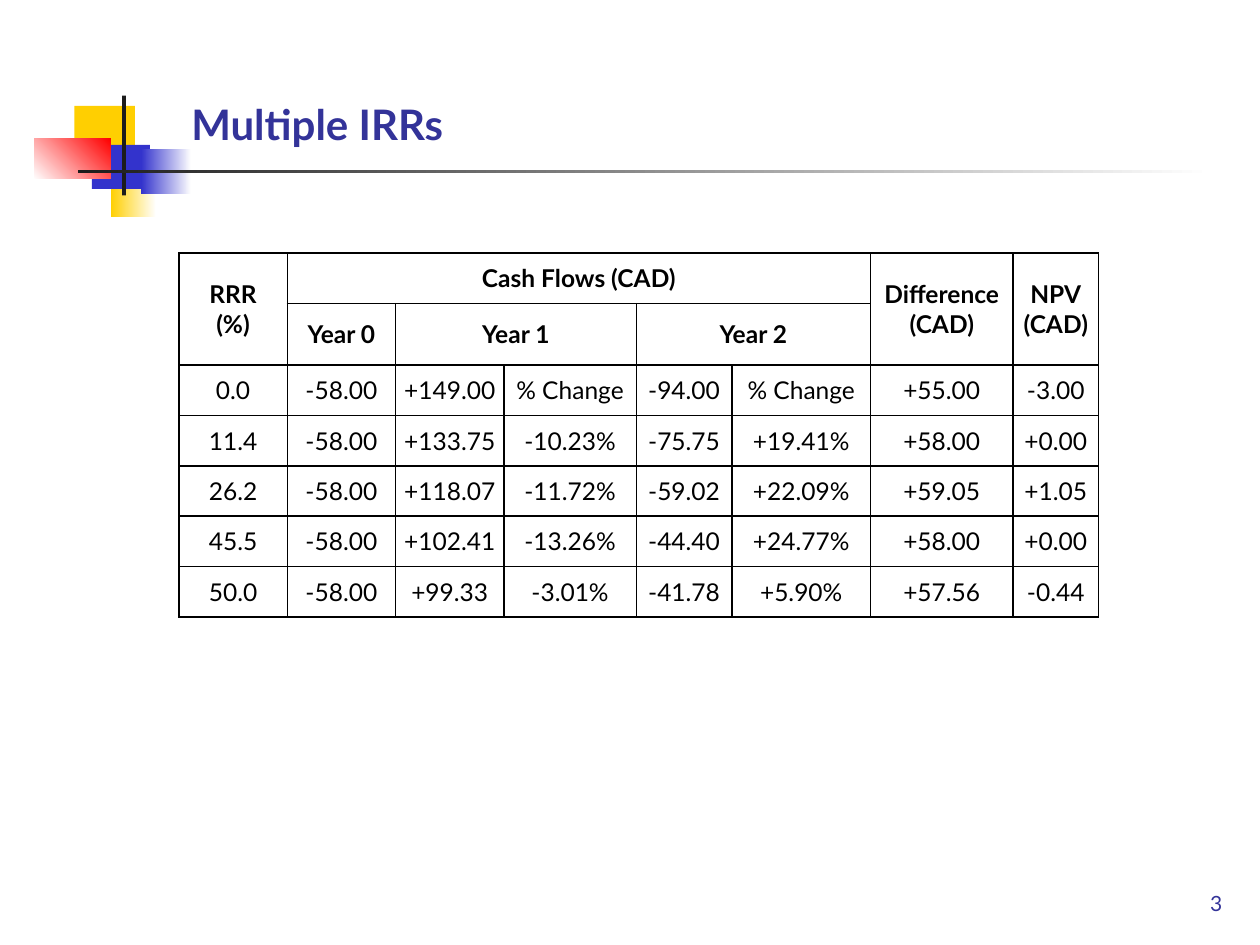
"""Build the Multiple IRRs slide: a title with block decoration and a cash flow table."""
from typing import Any, NamedTuple, Optional

from lxml import etree
from pptx import Presentation
from pptx import util as u
from pptx.dml.color import RGBColor
from pptx.enum import shapes, text
from pptx.oxml import ns

COLORS = {
    "yellow": "FFCF01",
    "blue": "3333CC",
    "red": "FF0000",
    "dark": "1C1C1C",
    "navy": "333399",
    "black": "000000",
    "white": "FFFFFF",
}
FONT = "Lato"


class Block(NamedTuple):
    left: float
    top: float
    width: float
    height: float
    color: str
    fade_to: Optional[str] = None
    angle: float = 0


class Label(NamedTuple):
    left: float
    top: float
    width: float
    height: float
    words: str
    size: int
    bold: bool
    align: Any


class Header(NamedTuple):
    row: int
    column: int
    last_row: int
    last_column: int
    words: str


BLOCKS = [
    Block(0.88, 1.2, 0.36, 0.52, "yellow", "white"),
    Block(0.59, 0.84, 0.48, 0.35, "yellow"),
    Block(0.73, 1.15, 0.46, 0.35, "blue"),
    Block(1.12, 1.18, 0.4, 0.36, "blue", "white"),
    Block(0.27, 1.1, 0.61, 0.32, "white", "red", 45),
    Block(0.97, 0.76, 0.03, 0.79, "dark"),
    Block(0.62, 1.35, 9, 0.02, "dark", "white"),
]
LABELS = [
    Label(1.42, 0.66, 6.1, 0.57, "Multiple IRRs", 24, True, text.PP_ALIGN.LEFT),
    Label(7.52, 6.82, 2.28, 0.5, "3", 12, False, text.PP_ALIGN.RIGHT),
]
HEADERS = [
    Header(0, 0, 1, 0, "RRR\n(%)"),
    Header(0, 1, 0, 5, "Cash Flows (CAD)"),
    Header(0, 6, 1, 6, "Difference\n(CAD)"),
    Header(0, 7, 1, 7, "NPV\n(CAD)"),
    Header(1, 1, 1, 1, "Year 0"),
    Header(1, 2, 1, 3, "Year 1"),
    Header(1, 4, 1, 5, "Year 2"),
]
CASH_FLOWS = [
    ("0.0", "-58.00", "+149.00", "% Change", "-94.00", "% Change", "+55.00", "-3.00"),
    ("11.4", "-58.00", "+133.75", "-10.23%", "-75.75", "+19.41%", "+58.00", "+0.00"),
    ("26.2", "-58.00", "+118.07", "-11.72%", "-59.02", "+22.09%", "+59.05", "+1.05"),
    ("45.5", "-58.00", "+102.41", "-13.26%", "-44.40", "+24.77%", "+58.00", "+0.00"),
    ("50.0", "-58.00", "+99.33", "-3.01%", "-41.78", "+5.90%", "+57.56", "-0.44"),
]
HEADER_ROWS = 2
COLUMN_WIDTHS = [0.86, 0.86, 0.86, 1.05, 0.76, 1.1, 1.13, 0.68]
ROW_HEIGHT = 0.4
CELL_FORMAT = {
    "vertical_anchor": text.MSO_ANCHOR.MIDDLE,
    "margin_left": u.Inches(0.05),
    "margin_right": u.Inches(0.05),
    "margin_top": u.Inches(0.01),
    "margin_bottom": u.Inches(0.01),
}
TABLE_FORMAT = {"first_row": False, "horz_banding": False}
LABEL_FORMAT = {"word_wrap": True, "vertical_anchor": text.MSO_ANCHOR.BOTTOM}


def rgb(name: str) -> RGBColor:
    return RGBColor.from_string(COLORS[name])


def apply_format(target: Any, values: dict) -> None:
    for name, value in values.items():
        setattr(target, name, value)


def write_text(frame: Any, words: str, size: int, color: str, bold: bool, align: Any) -> None:
    frame.text = words
    for paragraph in frame.paragraphs:
        paragraph.alignment = align
        for run in paragraph.runs:
            apply_format(run.font, {"name": FONT, "size": u.Pt(size), "bold": bold})
            run.font.color.rgb = rgb(color)


def draw_block(slide: Any, block: Block) -> None:
    shape = slide.shapes.add_shape(
        shapes.MSO_SHAPE.RECTANGLE, *(u.Inches(length) for length in block[:4])
    )
    shape.shadow.inherit = False
    shape.line.fill.background()
    if block.fade_to is None:
        shape.fill.solid()
        shape.fill.fore_color.rgb = rgb(block.color)
        return
    shape.fill.gradient()
    shape.fill.gradient_angle = block.angle
    for stop, color, position in zip(
        shape.fill.gradient_stops, (block.color, block.fade_to), (0, 1)
    ):
        stop.color.rgb = rgb(color)
        stop.position = position


def draw_label(slide: Any, label: Label) -> None:
    box = slide.shapes.add_textbox(*(u.Inches(length) for length in label[:4]))
    apply_format(box.text_frame, LABEL_FORMAT)
    write_text(box.text_frame, label.words, label.size, "navy", label.bold, label.align)


def add_borders(cell: Any) -> None:
    properties = cell._tc.get_or_add_tcPr()
    for index, side in enumerate(("lnL", "lnR", "lnT", "lnB")):
        line = etree.Element(ns.qn(f"a:{side}"), w=str(u.Pt(1)))
        fill = etree.SubElement(line, ns.qn("a:solidFill"))
        etree.SubElement(fill, ns.qn("a:srgbClr"), val=COLORS["black"])
        properties.insert(index, line)


def write_cell(cell: Any, words: str, bold: bool) -> None:
    write_text(cell.text_frame, words, 14, "black", bold, text.PP_ALIGN.CENTER)


def draw_table(slide: Any) -> None:
    row_count = HEADER_ROWS + len(CASH_FLOWS)
    table = slide.shapes.add_table(
        row_count, len(COLUMN_WIDTHS), u.Inches(1.42), u.Inches(2.01),
        u.Inches(sum(COLUMN_WIDTHS)), u.Inches(ROW_HEIGHT * row_count),
    ).table
    apply_format(table, TABLE_FORMAT)
    for column, width in zip(table.columns, COLUMN_WIDTHS):
        column.width = u.Inches(width)
    for row in table.rows:
        row.height = u.Inches(ROW_HEIGHT)
    for cell in table.iter_cells():
        apply_format(cell, CELL_FORMAT)
        cell.fill.background()
        add_borders(cell)
    for header in HEADERS:
        cell = table.cell(header.row, header.column)
        last_cell = table.cell(header.last_row, header.last_column)
        if (header.row, header.column) != (header.last_row, header.last_column):
            cell.merge(last_cell)
        write_cell(cell, header.words, True)
    for row_index, values in enumerate(CASH_FLOWS, HEADER_ROWS):
        for column_index, value in enumerate(values):
            write_cell(table.cell(row_index, column_index), value, False)


def main() -> None:
    presentation = Presentation()
    presentation.slide_width = u.Inches(10)
    presentation.slide_height = u.Inches(7.5)
    slide = presentation.slides.add_slide(presentation.slide_layouts[6])
    for block in BLOCKS:
        draw_block(slide, block)
    for label in LABELS:
        draw_label(slide, label)
    draw_table(slide)
    presentation.save("out.pptx")


if __name__ == "__main__":
    main()
